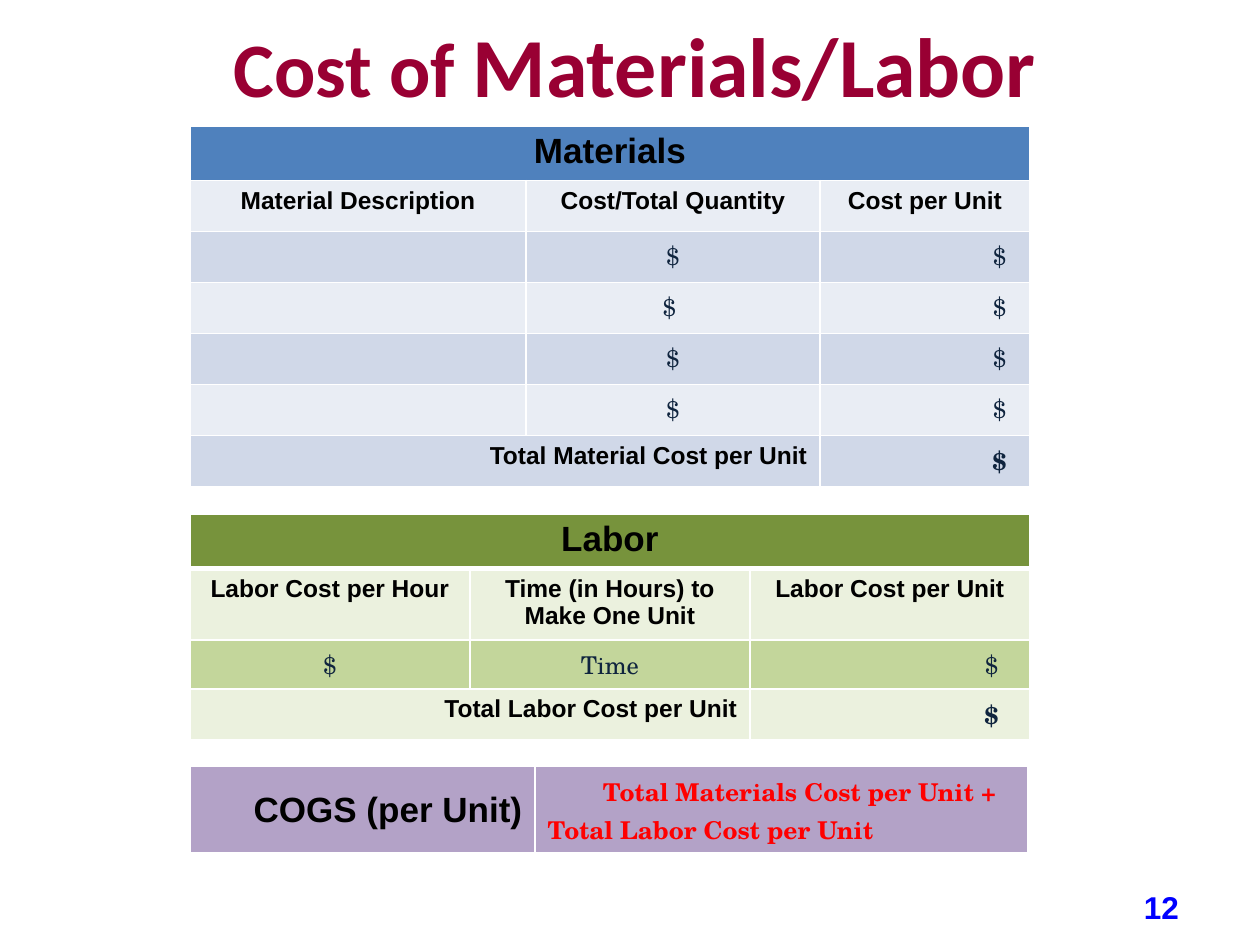
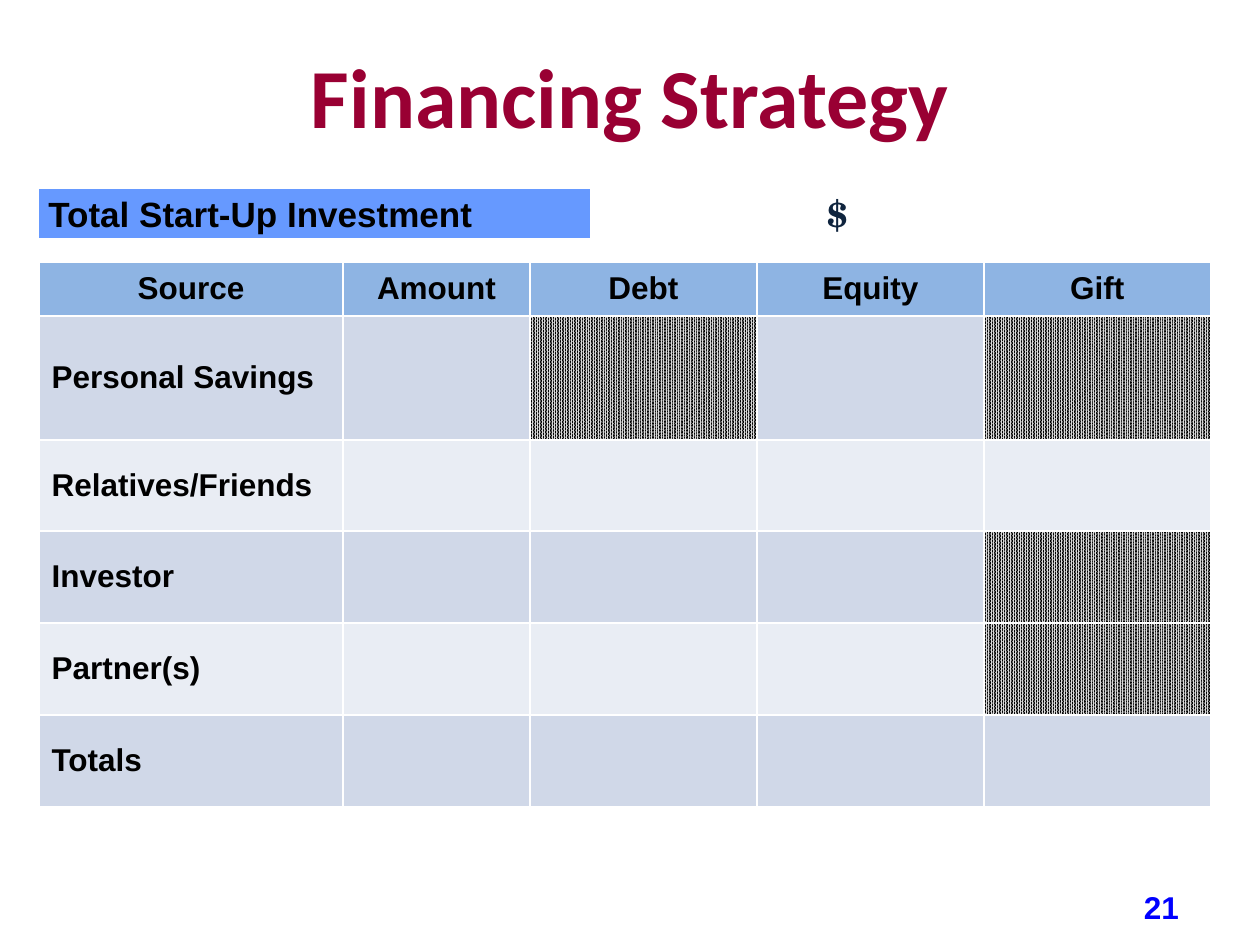
from collections import namedtuple

from lxml import etree
from pptx import Presentation
from pptx.dml.color import RGBColor
from pptx.enum.dml import MSO_PATTERN
from pptx.enum.shapes import MSO_SHAPE
from pptx.enum.text import MSO_ANCHOR, PP_ALIGN
from pptx.oxml.ns import qn
from pptx.util import Pt

PX = 914400 // 126
LEFT, CENTER, RIGHT = PP_ALIGN.LEFT, PP_ALIGN.CENTER, PP_ALIGN.RIGHT
TOP, MIDDLE = MSO_ANCHOR.TOP, MSO_ANCHOR.MIDDLE
RECT = MSO_SHAPE.RECTANGLE
HATCH = MSO_PATTERN.PERCENT_90

WHITE, BLACK, RED, NAVY = "FFFFFF", "000000", "FF0000", "0F243E"
BLUE_HEAD, BLUE_DARK, BLUE_LIGHT = "4F81BD", "D0D8E8", "E9EDF4"
GREEN_HEAD, GREEN_DARK, GREEN_LIGHT = "77933C", "C3D69B", "EBF1DE"
PURPLE, SKY, LABEL_BLUE, HATCH_GREY = "B3A2C7", "8EB4E3", "6699FF", "D9D9D9"

Style = namedtuple("Style", "size font color bold")
TITLE = Style(48, "Calibri", "990033", True)
TITLE_SMALL = TITLE._replace(size=44)
HEAD = Style(20, "Arial", BLACK, True)
SOURCE = HEAD._replace(size=18)
LABEL = HEAD._replace(size=14)
NUMBER = SOURCE._replace(color="0000FF")
VALUE = Style(14, "TeX Gyre Schola", NAVY, False)
TOTAL = VALUE._replace(bold=True)
FORMULA = TOTAL._replace(color=RED)
INVESTMENT = TOTAL._replace(size=20)


def rgb(hex_color):
    """Turn a hex string into a colour."""
    return RGBColor.from_string(hex_color)


def px(n):
    """Turn px into EMU."""
    return n * PX


def write(tf, runs, align=LEFT, tab=None):
    """Fill the first paragraph with (text, style) runs and an optional right tab in px."""
    p = tf.paragraphs[0]
    p.alignment = align
    if tab:
        tabs = etree.SubElement(p._p.get_or_add_pPr(), qn("a:tabLst"))
        etree.SubElement(tabs, qn("a:tab"), pos=str(px(tab)), algn="r")
    for text, style in runs:
        r = p.add_run()
        r.text = text
        r.font.size = Pt(style.size)
        r.font.name = style.font
        r.font.bold = style.bold
        r.font.color.rgb = rgb(style.color)
    return p


def add_text(s, box, runs, align, anchor=MIDDLE, side_margin=None):
    """Add a wrapped text box and return its paragraph."""
    tf = s.shapes.add_textbox(*map(px, box)).text_frame
    tf.word_wrap = True
    tf.vertical_anchor = anchor
    if side_margin is not None:
        tf.margin_left = tf.margin_right = px(side_margin)
    return write(tf, runs, align)


def add_box(s, box, fill, text, style, align, line=None):
    """Add a filled rectangle with one line of text."""
    sp = s.shapes.add_shape(RECT, *map(px, box))
    sp.shadow.inherit = False
    sp.fill.solid()
    sp.fill.fore_color.rgb = rgb(fill)
    if line:
        sp.line.color.rgb = rgb(line)
        sp.line.width = Pt(3)
    else:
        sp.line.fill.background()
    sp.text_frame.word_wrap = True
    sp.text_frame.vertical_anchor = TOP
    write(sp.text_frame, [(text, style)], align)


def set_borders(cell, top=1, bottom=1):
    """Give a cell white borders, 1 pt wide unless told otherwise."""
    tc_pr = cell._tc.get_or_add_tcPr()
    for side, width in zip("LRTB", (1, 1, top, bottom)):
        ln = etree.SubElement(tc_pr, qn("a:ln" + side), w=str(Pt(width)))
        fill = etree.SubElement(ln, qn("a:solidFill"))
        etree.SubElement(fill, qn("a:srgbClr"), val=WHITE)


def add_table(s, left, top, cols, rows, row_fills, thick_row=None):
    """Add a table with one fill per row and an optional thick rule below a row."""
    box = (left, top, sum(cols), sum(rows))
    table = s.shapes.add_table(len(rows), len(cols), *map(px, box)).table
    table.first_row = table.horz_banding = False
    for column, width in zip(table.columns, cols):
        column.width = px(width)
    for i, (row, height, fill) in enumerate(zip(table.rows, rows, row_fills)):
        row.height = px(height)
        for cell in row.cells:
            set_borders(cell, 3 if i - 1 == thick_row else 1, 3 if i == thick_row else 1)
            cell.fill.solid()
            cell.fill.fore_color.rgb = rgb(fill)
    return table


def put(table, row, col, text, style, align=CENTER, tab=None, span=1, anchor=TOP):
    """Write one cell, merged over span columns."""
    cell = table.cell(row, col)
    if span > 1:
        cell.merge(table.cell(row, col + span - 1))
    cell.vertical_anchor = anchor
    write(cell.text_frame, [(text, style)], align, tab)


def hatch(cell):
    """Mark a cell as not applicable."""
    cell.fill.patterned()
    cell.fill.pattern = HATCH
    cell.fill.fore_color.rgb = rgb(HATCH_GREY)
    cell.fill.back_color.rgb = rgb(BLACK)


def add_slide(prs, number, title_box, title_runs):
    """Add a blank slide with page number and title; return it and the title paragraph."""
    s = prs.slides.add_slide(prs.slide_layouts[6])
    add_text(s, (1126, 892, 53, 29), [(str(number), NUMBER)], RIGHT, side_margin=0)
    return s, add_text(s, title_box, title_runs, CENTER)


def add_cost_table(s, top, cols, rows, fills, heading, labels, total, tab, thick_row=None):
    """Add a cost table with heading, column labels and a total row."""
    table = add_table(s, 190, top, cols, rows, fills, thick_row)
    last = len(rows) - 1
    put(table, 0, 0, heading, HEAD, span=3)
    for col, label in enumerate(labels):
        put(table, 1, col, label, LABEL)
    for row in range(2, last):
        put(table, row, 2, "\t$", VALUE, LEFT, tab)
    put(table, last, 0, total, LABEL, RIGHT, span=2)
    put(table, last, 2, "\t$", TOTAL, LEFT, tab)
    return table


def build_costs(prs):
    """Build the slide on material and labor costs."""
    s, title = add_slide(prs, 12, (63, 21, 1144, 105),
                         [("Cost of ", TITLE_SMALL), ("Materials/Labor", TITLE)])
    title.line_spacing = 0.8

    bands = [BLUE_LIGHT, BLUE_DARK] * 3
    materials = add_cost_table(
        s, 126, (336, 294, 210), [51] * 7, [BLUE_HEAD] + bands, "Materials",
        ("Material Description", "Cost/Total Quantity", "Cost per Unit"),
        "Total Material Cost per Unit", 174)
    for row, text in enumerate(("$", "$ ", "$", "$"), 2):
        put(materials, row, 1, text, VALUE)

    labor = add_cost_table(
        s, 514, [280] * 3, (52, 71, 49, 51),
        (GREEN_HEAD, GREEN_LIGHT, GREEN_DARK, GREEN_LIGHT), "Labor",
        ("Labor Cost per Hour", "Time (in Hours) to Make One Unit", "Labor Cost per Unit"),
        "Total Labor Cost per Unit", 236, thick_row=0)
    put(labor, 2, 0, "$", VALUE)
    put(labor, 2, 1, "Time", VALUE)

    cogs = add_table(s, 190, 766, (345, 493), [88], [PURPLE], thick_row=0)
    put(cogs, 0, 0, "COGS (per Unit)", HEAD, RIGHT, anchor=MIDDLE)
    put(cogs, 0, 1, "\tTotal Materials Cost per Unit + \tTotal Labor Cost per Unit",
        FORMULA, LEFT, 456, anchor=MIDDLE)


def build_financing(prs):
    """Build the slide on financing sources."""
    s, _ = add_slide(prs, 21, (63, 21, 1134, 147), [("Financing Strategy", TITLE)])
    table = add_table(s, 39, 262, (304, 187, 227, 227, 227), (54, 124, 91, 92, 92, 92),
                      (SKY, BLUE_DARK, BLUE_LIGHT, BLUE_DARK, BLUE_LIGHT, BLUE_DARK))
    for col, text in enumerate(("Source", "Amount", "Debt", "Equity", "Gift")):
        put(table, 0, col, text, SOURCE, anchor=MIDDLE)
    sources = ("Personal Savings", "Relatives/Friends", "Investor", "Partner(s)", "Totals")
    for row, text in enumerate(sources, 1):
        put(table, row, 0, text, SOURCE, LEFT, anchor=MIDDLE)
    for row, col in ((1, 2), (1, 4), (3, 4), (4, 4)):
        hatch(table.cell(row, col))

    add_box(s, (640, 186, 220, 55), WHITE, "$", INVESTMENT, RIGHT)
    add_box(s, (36, 186, 557, 55), LABEL_BLUE, "Total Start-Up Investment", HEAD, LEFT, WHITE)


def main():
    """Build and save the presentation."""
    prs = Presentation()
    prs.slide_width, prs.slide_height = px(1260), px(945)
    build_costs(prs)
    build_financing(prs)
    prs.save("out.pptx")


if __name__ == "__main__":
    main()
